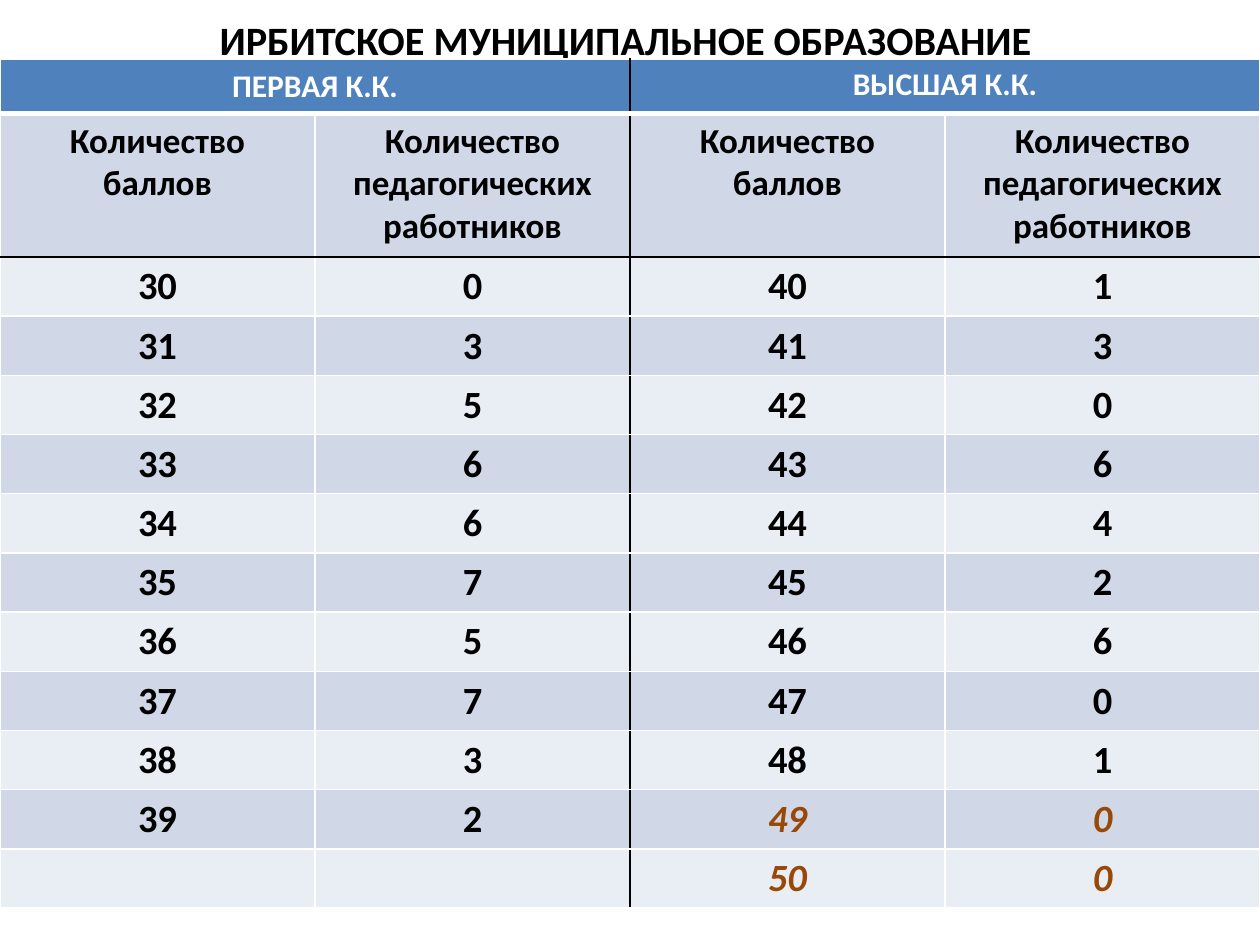
from dataclasses import dataclass
from typing import NamedTuple

from lxml.etree import SubElement
from pptx import Presentation
from pptx.dml.color import RGBColor
from pptx.enum.text import MSO_ANCHOR, PP_ALIGN
from pptx.oxml.ns import qn
from pptx.util import Inches, Pt


@dataclass(frozen=True)
class Theme:
    font: str = "Calibri"
    black: str = "000000"
    white: str = "FFFFFF"
    accent: str = "984807"
    header_fill: str = "4F81BD"
    dark_band: str = "D0D8E8"
    light_band: str = "E9EDF4"
    title_size: int = 23
    header_size: int = 18
    label_size: int = 20
    value_size: int = 22


class Border(NamedTuple):
    color: str
    width: float


class Score(NamedTuple):
    points: int
    teachers: int


THEME = Theme()
WHITE_LINE = Border(THEME.white, 1)
BLACK_LINE = Border(THEME.black, 1)
HEADER_LINE = Border(THEME.white, 3)

TITLE = "ИРБИТСКОЕ МУНИЦИПАЛЬНОЕ ОБРАЗОВАНИЕ"
CATEGORIES = ["ПЕРВАЯ К.К.", "ВЫСШАЯ К.К."]
LABELS = ["Количество баллов", "Количество педагогических работников"]
FIRST_CATEGORY = [Score(30 + i, n) for i, n in enumerate([0, 3, 5, 6, 6, 7, 5, 7, 3, 2])]
HIGHEST_CATEGORY = [Score(40 + i, n) for i, n in enumerate([1, 3, 0, 6, 4, 2, 6, 0, 1, 0, 0])]
HIGHLIGHT_FROM = 49
ROW_HEIGHTS = [0.43, 1.14] + [0.47] * len(HIGHEST_CATEGORY)
COLUMN_WIDTH = 2.5
COLUMN_COUNT = 4


def write_text(frame, text: str, size: int, color: str, italic: bool = False) -> None:
    paragraph = frame.paragraphs[0]
    paragraph.alignment = PP_ALIGN.CENTER
    run = paragraph.add_run()
    run.text = text
    font_format = {"name": THEME.font, "size": Pt(size), "bold": True, "italic": italic}
    for attribute, value in font_format.items():
        setattr(run.font, attribute, value)
    run.font.color.rgb = RGBColor.from_string(color)


def style_cell(cell, row: int, column: int) -> None:
    last_column = column + cell.span_width - 1 if cell.is_merge_origin else column
    borders = {
        "a:lnL": BLACK_LINE if column == 2 else WHITE_LINE,
        "a:lnR": BLACK_LINE if last_column == 1 else WHITE_LINE,
        "a:lnT": {1: HEADER_LINE, 2: BLACK_LINE}.get(row, WHITE_LINE),
        "a:lnB": {0: HEADER_LINE, 1: BLACK_LINE}.get(row, WHITE_LINE),
    }
    properties = cell._tc.get_or_add_tcPr()
    for tag, border in borders.items():
        line = SubElement(properties, qn(tag), w=str(Pt(border.width)))
        fill = SubElement(line, qn("a:solidFill"))
        SubElement(fill, qn("a:srgbClr"), val=border.color)
    band = THEME.dark_band if row % 2 else THEME.light_band
    cell.fill.solid()
    cell.fill.fore_color.rgb = RGBColor.from_string(band if row else THEME.header_fill)


def add_title(slide) -> None:
    shape = slide.shapes.add_textbox(Inches(0.47), Inches(0), Inches(9), Inches(0.62))
    frame = shape.text_frame
    for attribute, value in {"word_wrap": True, "vertical_anchor": MSO_ANCHOR.MIDDLE}.items():
        setattr(frame, attribute, value)
    write_text(frame, TITLE, THEME.title_size, THEME.black)


def add_scores(table, scores: list[Score], first_column: int) -> None:
    for row, score in enumerate(scores, start=2):
        highlighted = score.points >= HIGHLIGHT_FROM
        color = THEME.accent if highlighted else THEME.black
        for column, value in enumerate(score, start=first_column):
            frame = table.cell(row, column).text_frame
            write_text(frame, str(value), THEME.value_size, color, highlighted)


def add_score_table(slide) -> None:
    table = slide.shapes.add_table(
        len(ROW_HEIGHTS), COLUMN_COUNT, Inches(0), Inches(0.47),
        Inches(COLUMN_WIDTH * COLUMN_COUNT), Inches(sum(ROW_HEIGHTS)),
    ).table
    for row, height in zip(table.rows, ROW_HEIGHTS):
        row.height = Inches(height)
    for index, scores in enumerate([FIRST_CATEGORY, HIGHEST_CATEGORY]):
        first_column = index * 2
        header = table.cell(0, first_column)
        header.merge(table.cell(0, first_column + 1))
        write_text(header.text_frame, CATEGORIES[index], THEME.header_size, THEME.white)
        for column, label in enumerate(LABELS, start=first_column):
            write_text(table.cell(1, column).text_frame, label, THEME.label_size, THEME.black)
        add_scores(table, scores, first_column)
    table.cell(0, 0).vertical_anchor = MSO_ANCHOR.MIDDLE
    for row in range(len(ROW_HEIGHTS)):
        for column in range(COLUMN_COUNT):
            style_cell(table.cell(row, column), row, column)


def main() -> None:
    presentation = Presentation()
    presentation.slide_width = Inches(10)
    presentation.slide_height = Inches(7.5)
    slide = presentation.slides.add_slide(presentation.slide_layouts[6])
    add_title(slide)
    add_score_table(slide)
    presentation.save("out.pptx")


if __name__ == "__main__":
    main()
